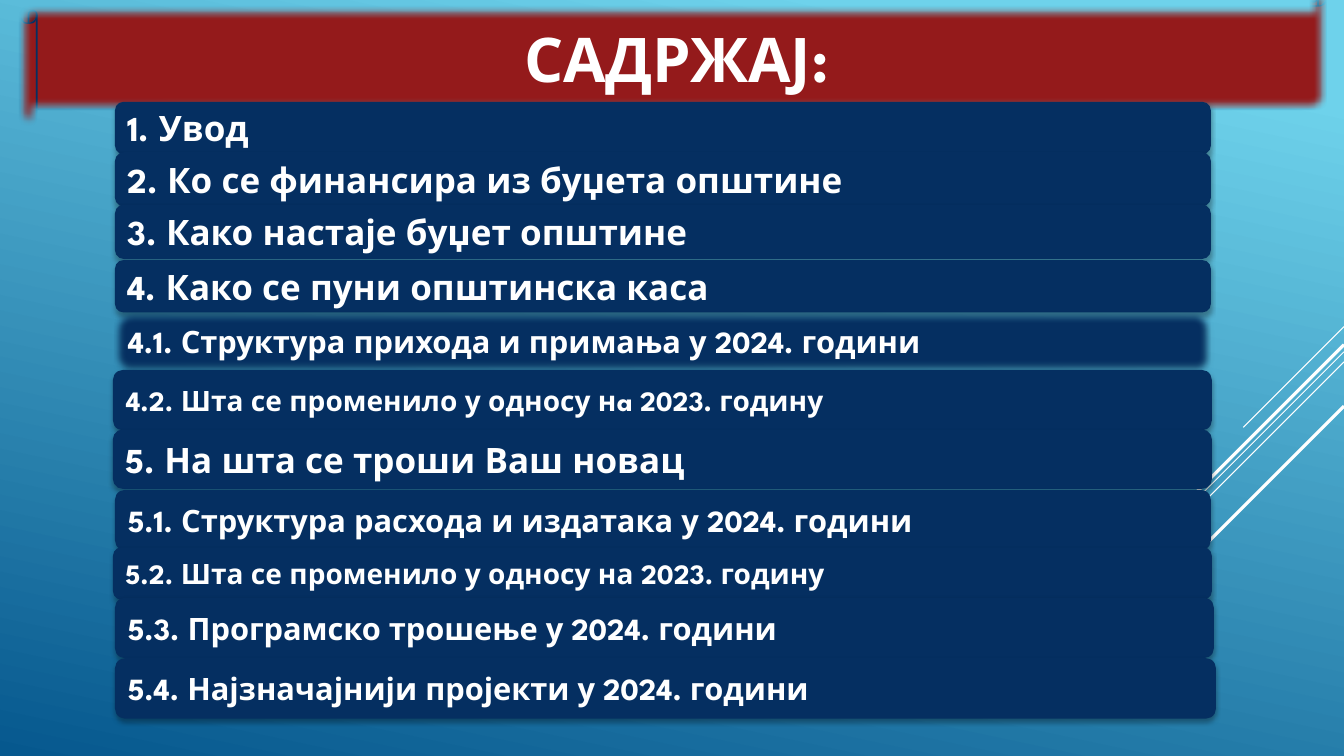
from dataclasses import dataclass

import pptx
import pptx.dml.color
import pptx.enum.shapes
import pptx.enum.text
import pptx.oxml
import pptx.oxml.ns
import pptx.util

Inches = pptx.util.Inches
Pt = pptx.util.Pt
Shape = pptx.enum.shapes.MSO_SHAPE
Align = pptx.enum.text.PP_ALIGN


@dataclass(frozen=True)
class Theme:
    font: str = "League Spartan"
    sky: str = "6ED2EB"
    deep: str = "06588E"
    navy: str = "052F61"
    red: str = "941A1B"
    white: str = "FFFFFF"
    title: int = 44
    chapter: int = 25
    section: int = 22
    detail: int = 20


THEME = Theme()

# Contents rows: text, size, left, top, width, height
ROWS = [
    ("1. Увод", THEME.chapter, 1.14, 1.01, 10.87, 0.52),
    ("2. Ко се финансира из буџета општине", THEME.chapter, 1.14, 1.51, 10.87, 0.54),
    ("3. Како настаје буџет општине", THEME.chapter, 1.14, 2.03, 10.87, 0.54),
    ("4. Како се пуни општинска каса", THEME.chapter, 1.14, 2.58, 10.87, 0.52),
    ("4.1. Структура прихода и примања у 2024. години", THEME.section, 1.14, 3.09, 10.87, 0.6),
    ("4.2. Шта се променило у односу нa 2023. годину", THEME.detail, 1.12, 3.67, 10.9, 0.6),
    ("5. На шта се троши Ваш новац", THEME.chapter, 1.12, 4.26, 10.9, 0.59),
    ("5.1. Структура расхода и издатака у 2024. години", THEME.section, 1.14, 4.86, 10.87, 0.6),
    ("5.2. Шта се променило у односу на 2023. годину", THEME.detail, 1.12, 5.43, 10.9, 0.52),
    ("5.3. Програмско трошење у 2024. години", THEME.section, 1.14, 5.93, 10.9, 0.6),
    ("5.4. Најзначајнији пројекти у 2024. години", THEME.section, 1.14, 6.53, 10.92, 0.6),
]
SOFT_ROW = "4.1."

# Diagonal rays from the right edge: start height, horizontal run, weight
RAYS = [(3.24, 1.0, 0.75), (3.49, 3.26, 0.75), (3.59, 2.07, 0.75),
        (3.42, 1.91, 2.25), (4.03, 1.39, 2.25)]

SHADOW = ('<a:outerShdw blurRad="44450" dist="27940" dir="5400000" rotWithShape="0">'
          '<a:srgbClr val="000000"><a:alpha val="32000"/></a:srgbClr></a:outerShdw>')
SOFT_EDGE = '<a:softEdge rad="63500"/>'


def colour(value):
    return pptx.dml.color.RGBColor.from_string(value)


def set_effects(element, effects=""):
    """Replace the effects of a shape or connector."""
    properties = element._element.spPr
    for previous in properties.findall(pptx.oxml.ns.qn("a:effectLst")):
        properties.remove(previous)
    properties.append(pptx.oxml.parse_xml(
        f'<a:effectLst {pptx.oxml.ns.nsdecls("a")}>{effects}</a:effectLst>'))


def write_text(shape, text, *, size, align=Align.LEFT):
    frame = shape.text_frame
    frame.word_wrap = True
    frame.auto_size = pptx.enum.text.MSO_AUTO_SIZE.NONE
    frame.vertical_anchor = pptx.enum.text.MSO_ANCHOR.MIDDLE
    para = frame.paragraphs[0]
    para.alignment = align
    span = para.add_run()
    span.text = text
    span.font.name = THEME.font
    span.font.size = Pt(size)
    span.font.bold = True
    span.font.color.rgb = colour(THEME.white)


def add_panel(page, kind, left, top, width, height, *, fill, effects, line=None):
    panel = page.shapes.add_shape(
        kind, Inches(left), Inches(top), Inches(width), Inches(height))
    panel.fill.solid()
    panel.fill.fore_color.rgb = colour(fill)
    if line:
        panel.line.color.rgb = colour(line)
        panel.line.width = Pt(1.25)
    else:
        panel.line.fill.background()
    set_effects(panel, effects)
    return panel


def add_ray(page, top, run, weight):
    edge = 13.33
    ray = page.shapes.add_connector(
        pptx.enum.shapes.MSO_CONNECTOR.STRAIGHT,
        Inches(edge), Inches(top), Inches(edge - run), Inches(top + run))
    ray.line.color.rgb = colour(THEME.white)
    ray.line.width = Pt(weight)
    set_effects(ray)


def paint_background(page):
    fill = page.background.fill
    fill.gradient()
    fill.gradient_angle = 258
    stops = [(0.1, THEME.sky), (1.0, THEME.deep)]
    for stop, (position, value) in zip(fill.gradient_stops, stops):
        stop.position = position
        stop.color.rgb = colour(value)


def add_title(page, text):
    banner = add_panel(page, Shape.HORIZONTAL_SCROLL, 0.19, -0.11, 12.96, 1.36,
                       fill=THEME.red, line=THEME.navy, effects=SOFT_EDGE)
    title = page.shapes.title
    title.left, title.top = Inches(0.36), Inches(0.06)
    title.width, title.height = Inches(12.7), Inches(1.02)
    write_text(title, text, size=THEME.title, align=Align.CENTER)
    # Bring the title in front of its banner
    banner._element.addnext(title._element)


def main():
    deck = pptx.Presentation()
    deck.slide_width, deck.slide_height = Inches(13.33), Inches(7.5)
    page = deck.slides.add_slide(deck.slide_layouts.get_by_name("Title Only"))

    # Backdrop
    paint_background(page)
    for ray in RAYS:
        add_ray(page, *ray)

    # Title banner
    add_title(page, "САДРЖАЈ:")

    # Contents
    for text, size, *place in ROWS:
        effects = SHADOW + (SOFT_EDGE if text.startswith(SOFT_ROW) else "")
        row = add_panel(page, Shape.ROUNDED_RECTANGLE, *place,
                        fill=THEME.navy, effects=effects)
        write_text(row, text, size=size)

    deck.save("out.pptx")


if __name__ == "__main__":
    main()
